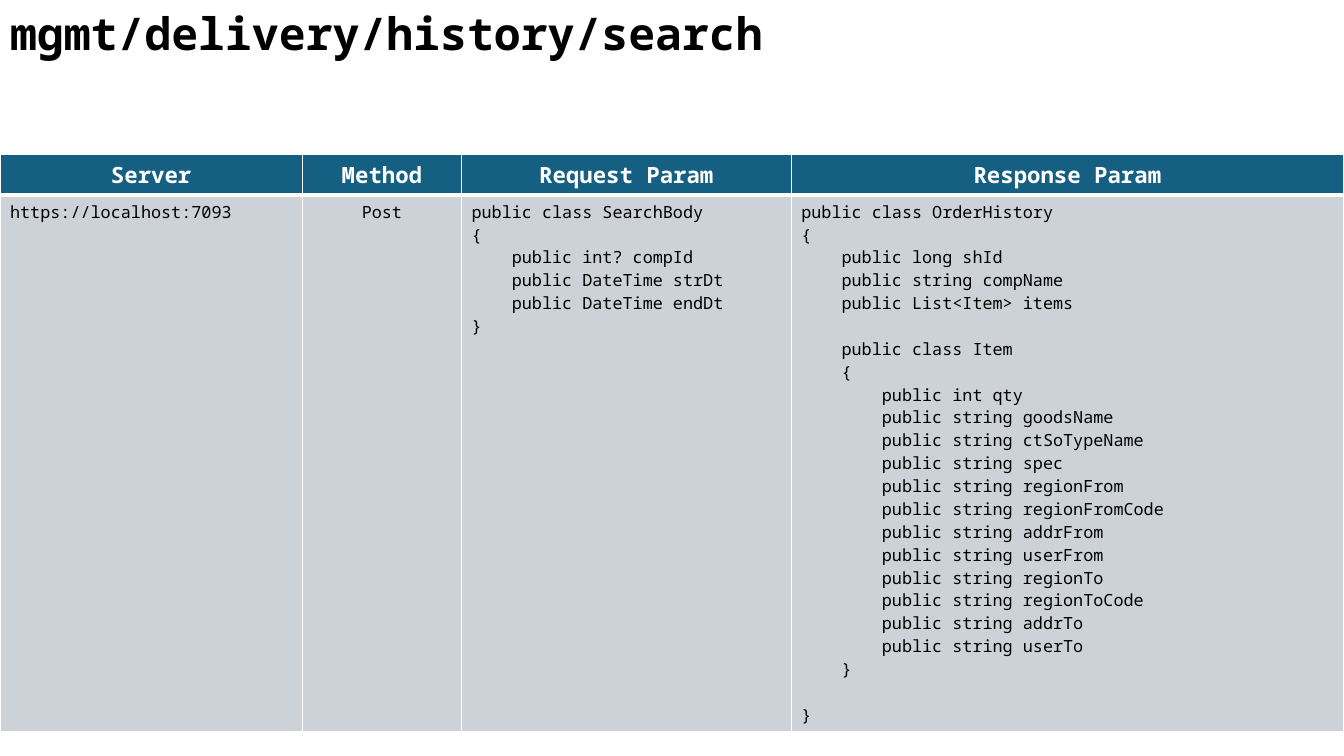
"""Build a slide that documents the delivery history search endpoint."""
import lxml.etree
import pptx
import pptx.dml.color
import pptx.enum.text
import pptx.oxml.ns
import pptx.text.text
import pptx.util

Cm = pptx.util.Cm
Pt = pptx.util.Pt
RGBColor = pptx.dml.color.RGBColor
Align = pptx.enum.text.PP_ALIGN

BLACK = RGBColor(0x00, 0x00, 0x00)
WHITE = RGBColor(0xFF, 0xFF, 0xFF)
HEADER_BLUE = RGBColor(0x15, 0x60, 0x82)
BODY_GREY = RGBColor(0xCC, 0xD2, 0xD8)
FONT_NAME = "Noto Sans Mono"

COLUMN_WIDTHS = [7.62, 4.01, 8.31, 13.92]
ROW_HEIGHTS = [1.03, 13.4]
HEADERS = ["Server", "Method", "Request Param", "Response Param"]

REQUEST_CODE = """public class SearchBody
{
    public int? compId
    public DateTime strDt
    public DateTime endDt
}"""

RESPONSE_CODE = """public class OrderHistory
{
    public long shId
    public string compName
    public List<Item> items

    public class Item
    {
        public int qty
        public string goodsName
        public string ctSoTypeName
        public string spec
        public string regionFrom
        public string regionFromCode
        public string addrFrom
        public string userFrom
        public string regionTo
        public string regionToCode
        public string addrTo
        public string userTo
    }

}"""

BODY = ["https://localhost:7093", "Post", REQUEST_CODE, RESPONSE_CODE]
BODY_ALIGNMENTS = [Align.LEFT, Align.CENTER, Align.LEFT, Align.LEFT]


def format_text(text_frame, size, color, bold, alignment):
    for paragraph in text_frame.paragraphs:
        paragraph.alignment = alignment
        fonts = [run.font for run in paragraph.runs]
        if not fonts:
            end_properties = paragraph._p.get_or_add_endParaRPr()
            fonts = [pptx.text.text.Font(end_properties)]
        for font in fonts:
            font.name = FONT_NAME
            font.size = Pt(size)
            font.bold = bold
            font.color.rgb = color


def add_borders(cell, top, bottom):
    properties = cell._tc.get_or_add_tcPr()
    for side, width in (("L", 1), ("R", 1), ("T", top), ("B", bottom)):
        line = lxml.etree.SubElement(
            properties, pptx.oxml.ns.qn(f"a:ln{side}"), w=str(Pt(width)))
        fill = lxml.etree.SubElement(line, pptx.oxml.ns.qn("a:solidFill"))
        lxml.etree.SubElement(fill, pptx.oxml.ns.qn("a:srgbClr"), val=str(WHITE))


def fill_cell(cell, text, fill_color):
    cell.text_frame.text = text
    cell.fill.solid()
    cell.fill.fore_color.rgb = fill_color


def set_title(slide, text):
    title = slide.shapes.title
    title.left, title.top = Cm(0), Cm(0)
    title.width, title.height = Cm(19.61), Cm(1.63)
    text_frame = title.text_frame
    text_frame.text = text
    text_frame.word_wrap = False
    text_frame.auto_size = pptx.enum.text.MSO_AUTO_SIZE.NONE
    text_frame.vertical_anchor = pptx.enum.text.MSO_ANCHOR.MIDDLE
    format_text(text_frame, 32, BLACK, True, Align.LEFT)


def add_endpoint_table(slide):
    frame = slide.shapes.add_table(
        len(ROW_HEIGHTS), len(COLUMN_WIDTHS), Cm(0), Cm(3.89),
        Cm(sum(COLUMN_WIDTHS)), Cm(sum(ROW_HEIGHTS)))
    table = frame.table
    for row, height in zip(table.rows, ROW_HEIGHTS):
        row.height = Cm(height)
    for index, width in enumerate(COLUMN_WIDTHS):
        table.columns[index].width = Cm(width)

        header = table.cell(0, index)
        add_borders(header, 1, 3)
        fill_cell(header, HEADERS[index], HEADER_BLUE)
        format_text(header.text_frame, 16, WHITE, True, Align.CENTER)

        body = table.cell(1, index)
        add_borders(body, 3, 1)
        fill_cell(body, BODY[index], BODY_GREY)
        format_text(body.text_frame, 12, BLACK, False, BODY_ALIGNMENTS[index])


def main():
    presentation = pptx.Presentation()
    presentation.slide_width = Cm(33.87)
    presentation.slide_height = Cm(19.05)
    slide = presentation.slides.add_slide(presentation.slide_layouts[5])
    set_title(slide, "mgmt/delivery/history/search")
    add_endpoint_table(slide)
    presentation.save("out.pptx")


if __name__ == "__main__":
    main()
